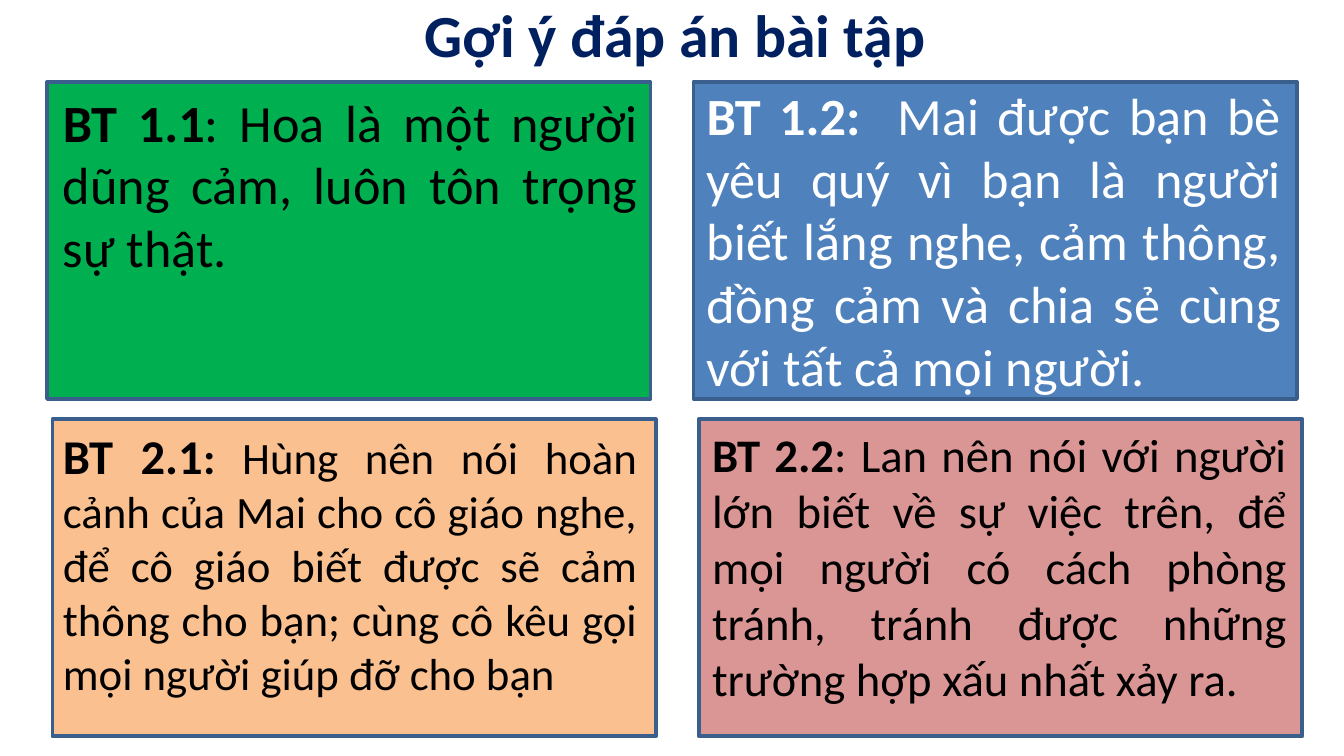
"""Build a slide with suggested answers on four coloured cards."""
import pptx
import pptx.dml.color
import pptx.enum.shapes
import pptx.enum.text
import pptx.util

HUES = {"navy": "002060", "edge": "3A5F8C", "green": "00B050", "blue": "4F81BD",
        "peach": "FAC090", "rose": "D99694", "black": "000000", "white": "FFFFFF"}
WIDE = 10
HIGH = WIDE * 9 / 16
LEFT, TOP = 0.35, 0.61
CARD_W, CARD_H = 4.49, 2.36
STEP_X, STEP_Y, SHIFT = 4.81, 2.51, 0.04
NOTE_W = 4.47

CARDS = [
    (0, 0, "green", "black", (0.37, 0.62, 1.51),
     [("BT 1.1", 28, True),
      (": Hoa là một người dũng cảm, luôn tôn trọng sự thật.", 28, False)]),
    (0, 1, "blue", "white", (5.16, 0.57, 2.46),
     [("BT 1.2:  ", 28, True),
      ("Mai được bạn bè yêu quý vì bạn là người biết lắng nghe, cảm thông, "
       "đồng cảm và chia sẻ cùng với tất cả mọi người.", 28, False)]),
    (1, 0, "peach", "black", (0.37, 3.12, 2.19),
     [("BT 2.1", 26, True), (": ", 24, True),
      ("Hùng nên nói hoàn cảnh của Mai cho cô giáo nghe, để cô giáo biết được "
       "sẽ cảm thông cho bạn; cùng cô kêu gọi mọi người giúp đỡ cho bạn", 24, False)]),
    (1, 1, "rose", "black", (5.2, 3.12, 2.2),
     [("BT 2.2", 25, True),
      (": Lan nên nói với người lớn biết về sự việc trên, để mọi người có cách "
       "phòng tránh, tránh được những trường hợp xấu nhất xảy ra.", 25, False)]),
]


def hue(name):
    """Return the named colour."""
    return pptx.dml.color.RGBColor.from_string(HUES[name])


def inches(*sizes):
    """Turn numbers into lengths in inches."""
    return [pptx.util.Inches(size) for size in sizes]


def style(para, color, align):
    """Set the font, colour and alignment of a paragraph."""
    para.font.name = "Calibri"
    para.font.color.rgb = hue(color)
    para.alignment = align


def add_title(slide, text):
    """Fill and place the title."""
    title = slide.shapes.title
    title.left, title.top, title.width, title.height = inches(2.96, -0.07, 4.13, 0.64)
    frame = title.text_frame
    frame.text = text
    frame.word_wrap = False
    frame.auto_size = pptx.enum.text.MSO_AUTO_SIZE.NONE
    frame.vertical_anchor = pptx.enum.text.MSO_ANCHOR.TOP
    para = frame.paragraphs[0]
    style(para, "navy", pptx.enum.text.PP_ALIGN.CENTER)
    para.font.size = pptx.util.Pt(32)
    para.font.bold = True


def add_card(slide, row, col, fill):
    """Draw one card of the grid, with the lower row set slightly to the right."""
    card = slide.shapes.add_shape(
        pptx.enum.shapes.MSO_SHAPE.RECTANGLE,
        *inches(LEFT + col * STEP_X + row * SHIFT, TOP + row * STEP_Y, CARD_W, CARD_H))
    card.shadow.inherit = False
    card.fill.solid()
    card.fill.fore_color.rgb = hue(fill)
    card.line.color.rgb = hue("edge")
    card.line.width = pptx.util.Pt(2)


def add_note(slide, place, color, parts):
    """Write one answer in a justified text box."""
    left, top, height = place
    frame = slide.shapes.add_textbox(*inches(left, top, NOTE_W, height)).text_frame
    frame.word_wrap = True
    frame.auto_size = pptx.enum.text.MSO_AUTO_SIZE.SHAPE_TO_FIT_TEXT
    para = frame.paragraphs[0]
    style(para, color, pptx.enum.text.PP_ALIGN.JUSTIFY)
    for text, size, bold in parts:
        run = para.add_run()
        run.text = text
        run.font.size = pptx.util.Pt(size)
        run.font.bold = bold


def main():
    """Build and save the slide."""
    deck = pptx.Presentation()
    deck.slide_width, deck.slide_height = inches(WIDE, HIGH)
    slide = deck.slides.add_slide(deck.slide_layouts.get_by_name("Title Only"))
    add_title(slide, "Gợi ý đáp án bài tập")
    for row, col, fill, color, place, parts in CARDS:
        add_card(slide, row, col, fill)
        add_note(slide, place, color, parts)
    deck.save("out.pptx")


if __name__ == "__main__":
    main()
